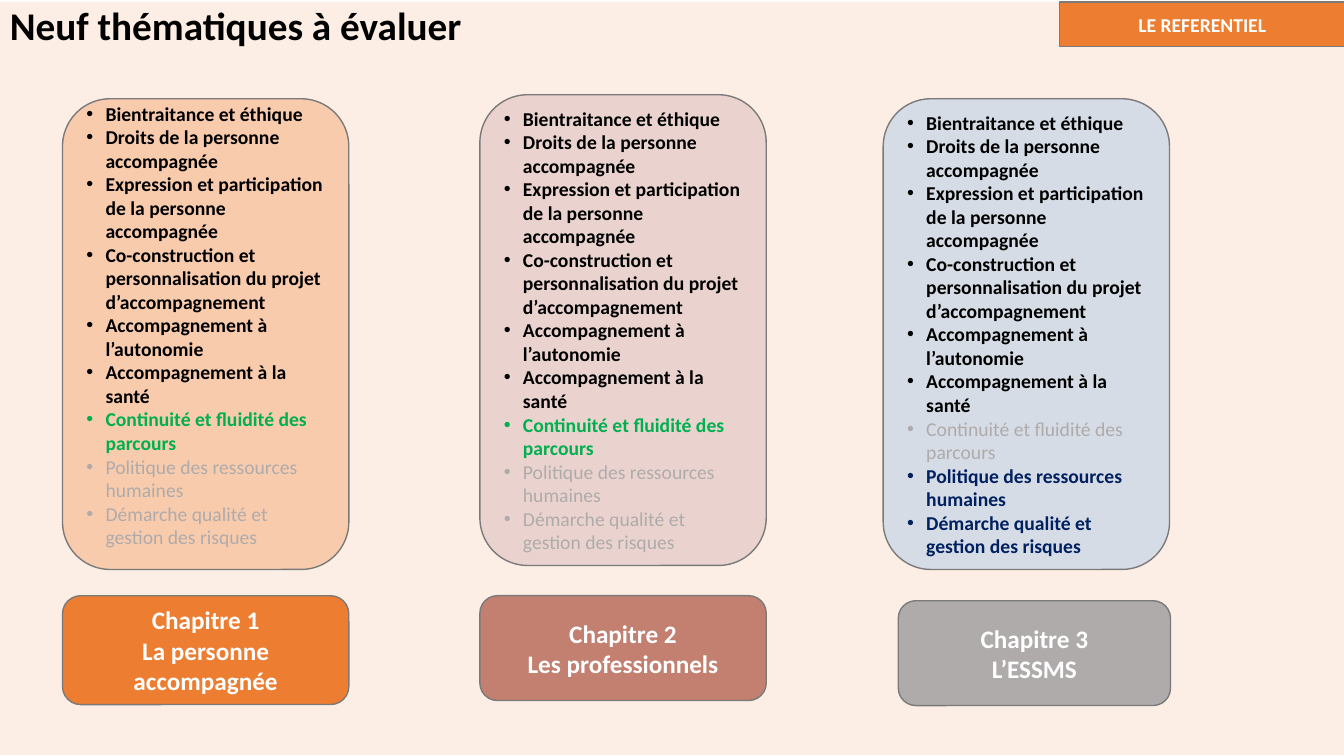
from pptx import Presentation
from pptx.dml.color import RGBColor as Rgb
from pptx.enum.shapes import MSO_SHAPE as Form
from pptx.enum.text import MSO_ANCHOR as Anchor, PP_ALIGN as Align
from pptx.oxml.ns import qn
from pptx.util import Inches, Pt
from lxml.etree import SubElement as Sub

BLACK, WHITE, GREY, GREEN, NAVY = "000000", "FFFFFF", "AFABAB", "00B050", "002060"
ORANGE = "ED7D31"
THEMES = [
    "Bientraitance et éthique",
    "Droits de la personne accompagnée",
    "Expression et participation de la personne accompagnée",
    "Co-construction et personnalisation du projet d’accompagnement",
    "Accompagnement à l’autonomie",
    "Accompagnement à la santé",
    "Continuité et fluidité des parcours",
    "Politique des ressources humaines",
    "Démarche qualité et gestion des risques",
]


def color(code):
    return Rgb.from_string(code)


class Page:
    font = "Calibri"
    edge = "7A7A7A"

    def __init__(self, slide):
        self.slide = slide

    def shape(self, form, box, fill, line=True):
        item = self.slide.shapes.add_shape(form, *map(Inches, box))
        item.shadow.inherit = False
        item.fill.solid()
        item.fill.fore_color.rgb = color(fill)
        if line:
            item.line.color.rgb = color(self.edge)
            item.line.width = Pt(1)
        else:
            item.line.fill.background()
        item.text_frame.word_wrap = True
        return item

    def style(self, para, text, size, ink=WHITE, bold=True, align=Align.CENTER):
        para.text = text
        para.alignment = align
        para.font.name = self.font
        para.font.size = Pt(size)
        para.font.bold = bold
        para.font.color.rgb = color(ink)

    def lines(self, frame, count):
        for _ in range(count - 1):
            frame.add_paragraph()
        return frame.paragraphs

    def title(self, box, fill, text):
        frame = self.shape(Form.RECTANGLE, box, fill, False).text_frame
        frame.vertical_anchor = Anchor.TOP
        para = frame.paragraphs[0]
        self.style(para, text, 28, BLACK, align=Align.LEFT)
        para.line_spacing = 0.9

    def label(self, form, box, fill, texts, size):
        frame = self.shape(form, box, fill).text_frame
        frame.vertical_anchor = Anchor.MIDDLE
        for para, text in zip(self.lines(frame, len(texts)), texts):
            self.style(para, text, size)

    def bullet(self, para):
        props = para._p.get_or_add_pPr()
        props.set("marL", str(Inches(0.19)))
        props.set("indent", str(-Inches(0.19)))
        Sub(props, qn("a:buFont"), typeface="Arial")
        Sub(props, qn("a:buChar"), char="•")

    def card(self, box, fill, inks, foot):
        frame = self.shape(Form.ROUNDED_RECTANGLE, box, fill).text_frame
        frame.vertical_anchor = Anchor.MIDDLE
        frame.margin_bottom = Inches(foot)
        paras = self.lines(frame, len(THEMES))
        for para, text, ink in zip(paras, THEMES, inks):
            self.bullet(para)
            self.style(para, text, 14, ink, ink != GREY, Align.LEFT)


def main():
    deck = Presentation()
    deck.slide_width, deck.slide_height = Inches(13.33), Inches(7.5)
    page = Page(deck.slides.add_slide(deck.slide_layouts[6]))

    page.title((0, 0.02, 13.33, 7.47), "FCEEE4", "Neuf thématiques à évaluer")

    people = [BLACK] * 6 + [GREEN, GREY, GREY]
    house = [BLACK] * 6 + [GREY, NAVY, NAVY]
    cards = [
        (0.62, 0.98, "F8CBAD", people, 0.23),
        (4.76, 0.94, "EAD3CE", people, 0.05),
        (8.76, 0.98, "D6DCE5", house, 0.05),
    ]
    for left, top, fill, inks, foot in cards:
        page.card((left, top, 2.84, 4.67), fill, inks, foot)

    parts = [
        ((0.62, 5.91, 2.84, 1.08), ORANGE, "La personne accompagnée"),
        ((4.76, 5.91, 2.84, 1.04), "C37F6F", "Les professionnels"),
        ((8.91, 5.96, 2.7, 1.04), GREY, "L’ESSMS"),
    ]
    for rank, (box, fill, name) in enumerate(parts, 1):
        texts = [f"Chapitre {rank}", name]
        page.label(Form.ROUNDED_RECTANGLE, box, fill, texts, 18)

    page.label(Form.RECTANGLE, (10.51, 0.02, 2.83, 0.44), ORANGE, ["LE REFERENTIEL"], 14)
    deck.save("out.pptx")


if __name__ == "__main__":
    main()
